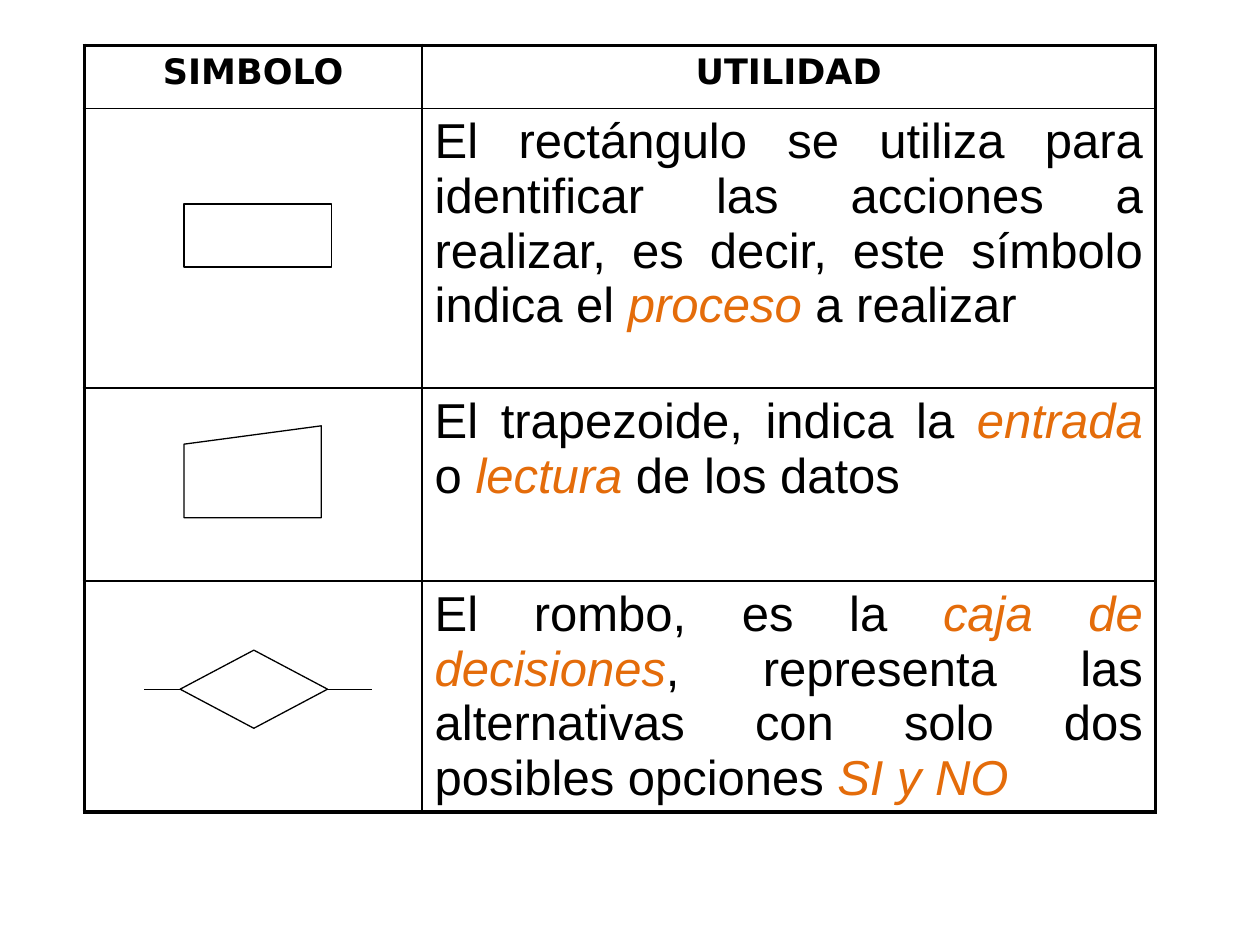
from lxml import etree
from pptx import Presentation
from pptx.dml.color import RGBColor
from pptx.enum.shapes import MSO_CONNECTOR, MSO_SHAPE
from pptx.enum.text import PP_ALIGN
from pptx.oxml.ns import qn
from pptx.util import Inches, Pt

BLACK, WHITE, ORANGE = "000000", "FFFFFF", "E46C0A"
OUTER, INNER = 2.25, 1


def color(hex_string):
    return RGBColor.from_string(hex_string)


def set_borders(cell, widths):
    """Draw black borders; widths in points run left, right, top, bottom."""
    properties = cell._tc.get_or_add_tcPr()
    for position, (side, width) in enumerate(zip("LRTB", widths)):
        border = etree.Element(qn(f"a:ln{side}"), w=str(Pt(width)))
        fill = etree.SubElement(border, qn("a:solidFill"))
        etree.SubElement(fill, qn("a:srgbClr"), val=BLACK)
        properties.insert(position, border)


prs = Presentation()
prs.slide_width, prs.slide_height = Inches(10), Inches(7.5)
slide = prs.slides.add_slide(prs.slide_layouts[6])

# Each row is two cells; each cell is a list of (text, emphasized) runs
rows = [
    ([("SIMBOLO", False)], [("UTILIDAD", False)]),
    ([], [("El rectángulo se utiliza para identificar las acciones a realizar, "
           "es decir, este símbolo indica el ", False),
          ("proceso", True), (" a realizar", False)]),
    ([], [("El trapezoide, indica la ", False), ("entrada", True),
          (" o ", False), ("lectura", True), (" de los datos", False)]),
    ([], [("El rombo, es la ", False), ("caja de decisiones", True),
          (", representa las alternativas con solo dos posibles opciones ", False),
          ("SI y NO", True)]),
]
column_widths = [2.68, 5.82]
row_heights = [0.5, 2.22, 1.53, 1.83]

table = slide.shapes.add_table(
    len(rows), len(column_widths), Inches(0.67), Inches(0.36),
    Inches(sum(column_widths)), Inches(sum(row_heights))).table
table.first_row = table.horz_banding = False
for column, width in zip(table.columns, column_widths):
    column.width = Inches(width)
for row, height in zip(table.rows, row_heights):
    row.height = Inches(height)

last_row, last_column = len(rows) - 1, len(column_widths) - 1
for r, row in enumerate(rows):
    header = r == 0
    for c, runs in enumerate(row):
        cell = table.cell(r, c)
        cell.fill.background()
        set_borders(cell, [OUTER if c == 0 else INNER,
                           OUTER if c == last_column else INNER,
                           OUTER if header else INNER,
                           OUTER if r == last_row else INNER])
        paragraph = cell.text_frame.paragraphs[0]
        paragraph.alignment = PP_ALIGN.CENTER if header else PP_ALIGN.JUSTIFY
        for text, emphasized in runs:
            run = paragraph.add_run()
            run.text = text
            run.font.name = "DejaVu Sans" if header else "Arial"
            run.font.size = Pt(20 if header else 28)
            run.font.bold = header
            run.font.italic = emphasized
            run.font.color.rgb = color(ORANGE if emphasized else BLACK)

# Flowchart symbols in the left column; the decision comes last
for kind, left, top, width, height in [
    (MSO_SHAPE.RECTANGLE, 1.46, 1.62, 1.17, 0.5),
    (MSO_SHAPE.FLOWCHART_MANUAL_INPUT, 1.46, 3.38, 1.09, 0.73),
    (MSO_SHAPE.FLOWCHART_DECISION, 1.43, 5.16, 1.17, 0.62),
]:
    symbol = slide.shapes.add_shape(
        kind, Inches(left), Inches(top), Inches(width), Inches(height))
    symbol.shadow.inherit = False
    symbol.fill.solid()
    symbol.fill.fore_color.rgb = color(WHITE)
    symbol.line.color.rgb = color(BLACK)
    symbol.line.width = Pt(0.75)

decision = symbol
for side, start, end in [(1, 1.43, 1.14), (3, 2.6, 2.95)]:
    branch = slide.shapes.add_connector(
        MSO_CONNECTOR.STRAIGHT, Inches(start), Inches(5.47), Inches(end), Inches(5.47))
    branch.begin_connect(decision, side)
    branch.line.color.rgb = color(BLACK)
    branch.line.width = Pt(0.75)
    etree.SubElement(branch._element.spPr, qn("a:effectLst"))

prs.save("out.pptx")
